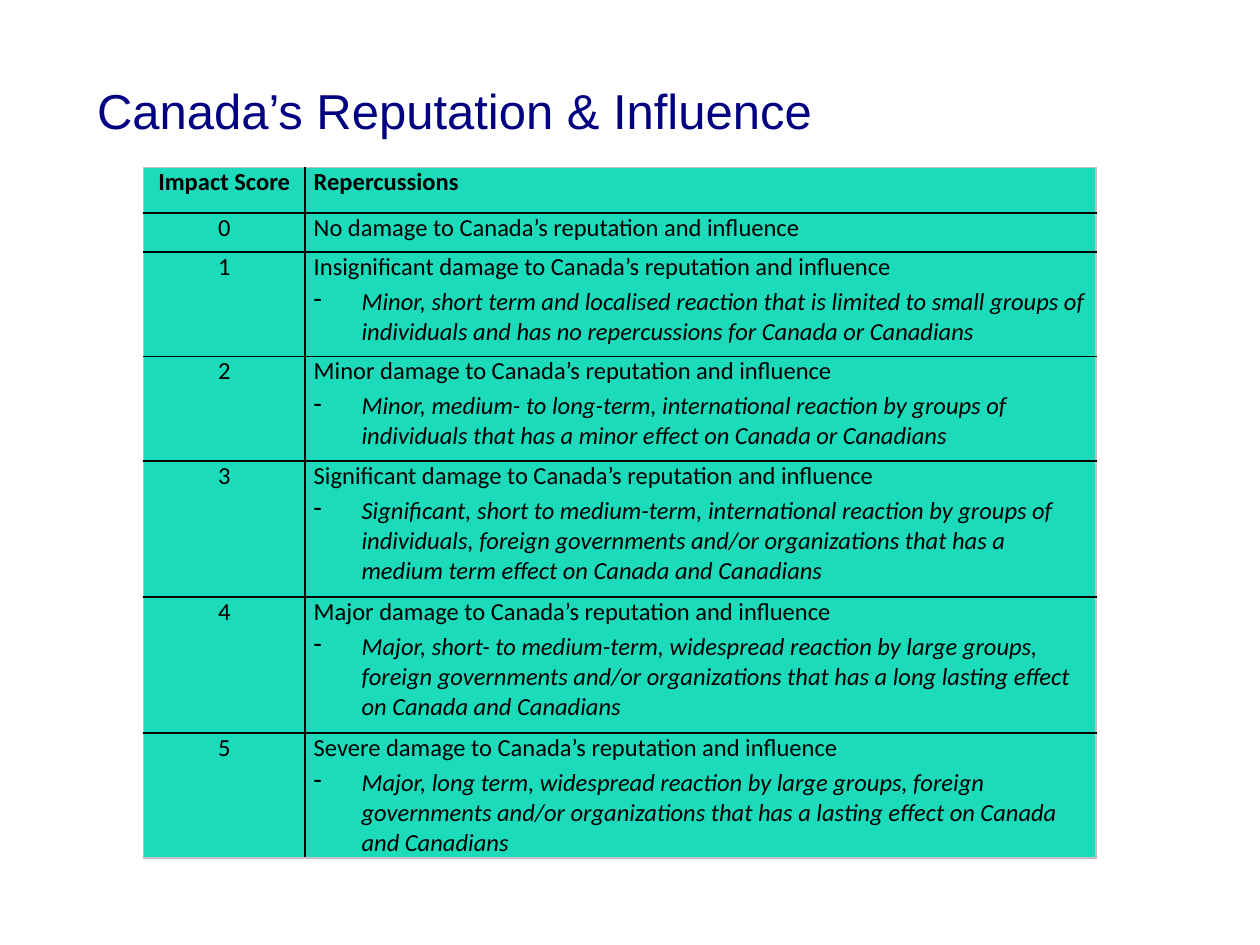
from dataclasses import dataclass

import lxml.etree
import pptx
import pptx.dml.color
import pptx.enum.text
import pptx.oxml.ns
import pptx.util

NAVY = pptx.dml.color.RGBColor(0x00, 0x00, 0x80)
BLACK = pptx.dml.color.RGBColor(0x00, 0x00, 0x00)
TURQUOISE = pptx.dml.color.RGBColor(0x1B, 0xDB, 0xBB)
SILVER = pptx.dml.color.RGBColor(0xC0, 0xC0, 0xC0)

SLIDE_WIDTH = pptx.util.Inches(10)
SLIDE_HEIGHT = pptx.util.Inches(7.5)
COLUMN_WIDTHS = (1.28, 6.28)
ROW_HEIGHTS = (0.36, 0.31, 0.83, 0.83, 1.08, 1.08, 0.98)
HANGING_INDENT = pptx.util.Inches(0.38)


@dataclass(frozen=True)
class Impact:
    severity: str
    reaction: str = ""


IMPACTS = (
    Impact("No"),
    Impact("Insignificant",
           "Minor, short term and localised reaction that is limited to small groups of "
           "individuals and has no repercussions for Canada or Canadians"),
    Impact("Minor",
           "Minor, medium- to long-term, international reaction by groups of "
           "individuals that has a minor effect on Canada or Canadians"),
    Impact("Significant",
           "Significant, short to medium-term, international reaction by groups of "
           "individuals, foreign governments and/or organizations that has a "
           "medium term effect on Canada and Canadians"),
    Impact("Major",
           "Major, short- to medium-term, widespread reaction by large groups, "
           "foreign governments and/or organizations that has a long lasting effect "
           "on Canada and Canadians"),
    Impact("Severe",
           "Major, long term, widespread reaction by large groups, foreign "
           "governments and/or organizations that has a lasting effect on Canada "
           "and Canadians"),
)


def add_title(slide, text: str) -> None:
    title = slide.shapes.title
    title.left, title.top = int(SLIDE_WIDTH * 0.067), SLIDE_HEIGHT // 30
    title.width, title.height = int(SLIDE_WIDTH * 0.85), SLIDE_HEIGHT // 6
    title.text_frame.text = text
    title.text_frame.vertical_anchor = pptx.enum.text.MSO_ANCHOR.MIDDLE
    heading = title.text_frame.paragraphs[0]
    heading.alignment = pptx.enum.text.PP_ALIGN.LEFT
    heading.font.name = "Arial"
    heading.font.size = pptx.util.Pt(28)
    heading.font.color.rgb = NAVY


def style_paragraph(paragraph, bold: bool = False, italic: bool = False) -> None:
    paragraph.font.name = "Calibri"
    paragraph.font.size = pptx.util.Pt(14)
    paragraph.font.bold = bold
    paragraph.font.italic = italic
    paragraph.font.color.rgb = BLACK


def add_dash(paragraph) -> None:
    """Give the paragraph a hanging dash bullet."""
    properties = paragraph._p.get_or_add_pPr()
    properties.set("marL", str(HANGING_INDENT))
    properties.set("indent", str(-HANGING_INDENT))
    bullet = lxml.etree.SubElement(properties, pptx.oxml.ns.qn("a:buChar"))
    bullet.set("char", "-")


def set_borders(cell, outer_sides: set[str]) -> None:
    """Rule the cell in black, with silver on the sides at the table's edge."""
    properties = cell._tc.get_or_add_tcPr()
    for position, side in enumerate("LRTB"):
        line = lxml.etree.Element(pptx.oxml.ns.qn(f"a:ln{side}"), w=str(pptx.util.Pt(1)))
        fill = lxml.etree.SubElement(line, pptx.oxml.ns.qn("a:solidFill"))
        color = SILVER if side in outer_sides else BLACK
        lxml.etree.SubElement(fill, pptx.oxml.ns.qn("a:srgbClr"), val=str(color))
        properties.insert(position, line)


def format_cell(cell, row: int, column: int) -> None:
    cell.margin_left = cell.margin_right = pptx.util.Inches(0.07)
    cell.margin_top = cell.margin_bottom = 0
    cell.fill.solid()
    cell.fill.fore_color.rgb = TURQUOISE
    edges = {"L": column == 0, "R": column == len(COLUMN_WIDTHS) - 1,
             "T": row == 0, "B": row == len(ROW_HEIGHTS) - 1}
    set_borders(cell, {side for side, is_outer in edges.items() if is_outer})


def fill_score(cell, text: str, bold: bool = False) -> None:
    cell.text = text
    score = cell.text_frame.paragraphs[0]
    score.alignment = pptx.enum.text.PP_ALIGN.CENTER
    style_paragraph(score, bold)


def fill_repercussions(cell, impact: Impact) -> None:
    cell.text = f"{impact.severity} damage to Canada’s reputation and influence"
    summary = cell.text_frame.paragraphs[0]
    summary.space_after = pptx.util.Pt(3)
    style_paragraph(summary)
    if impact.reaction:
        reaction = cell.text_frame.add_paragraph()
        reaction.text = impact.reaction
        add_dash(reaction)
        reaction.space_after = pptx.util.Pt(3)
        style_paragraph(reaction, italic=True)


def add_impact_table(slide) -> None:
    table = slide.shapes.add_table(
        len(ROW_HEIGHTS), len(COLUMN_WIDTHS),
        pptx.util.Inches(1.14), pptx.util.Inches(1.33),
        pptx.util.Inches(sum(COLUMN_WIDTHS)), pptx.util.Inches(sum(ROW_HEIGHTS))).table
    table.first_row = table.horz_banding = False
    for column, width in zip(table.columns, COLUMN_WIDTHS):
        column.width = pptx.util.Inches(width)
    for row, height in zip(table.rows, ROW_HEIGHTS):
        row.height = pptx.util.Inches(height)

    for row in range(len(ROW_HEIGHTS)):
        for column in range(len(COLUMN_WIDTHS)):
            format_cell(table.cell(row, column), row, column)

    fill_score(table.cell(0, 0), "Impact Score", bold=True)
    table.cell(0, 1).text = "Repercussions"
    style_paragraph(table.cell(0, 1).text_frame.paragraphs[0], bold=True)
    for score, impact in enumerate(IMPACTS):
        fill_score(table.cell(score + 1, 0), str(score))
        fill_repercussions(table.cell(score + 1, 1), impact)


def main() -> None:
    presentation = pptx.Presentation()
    presentation.slide_width, presentation.slide_height = SLIDE_WIDTH, SLIDE_HEIGHT
    slide = presentation.slides.add_slide(presentation.slide_layouts.get_by_name("Title Only"))
    add_title(slide, "Canada’s Reputation & Influence")
    add_impact_table(slide)
    presentation.save("out.pptx")


if __name__ == "__main__":
    main()
